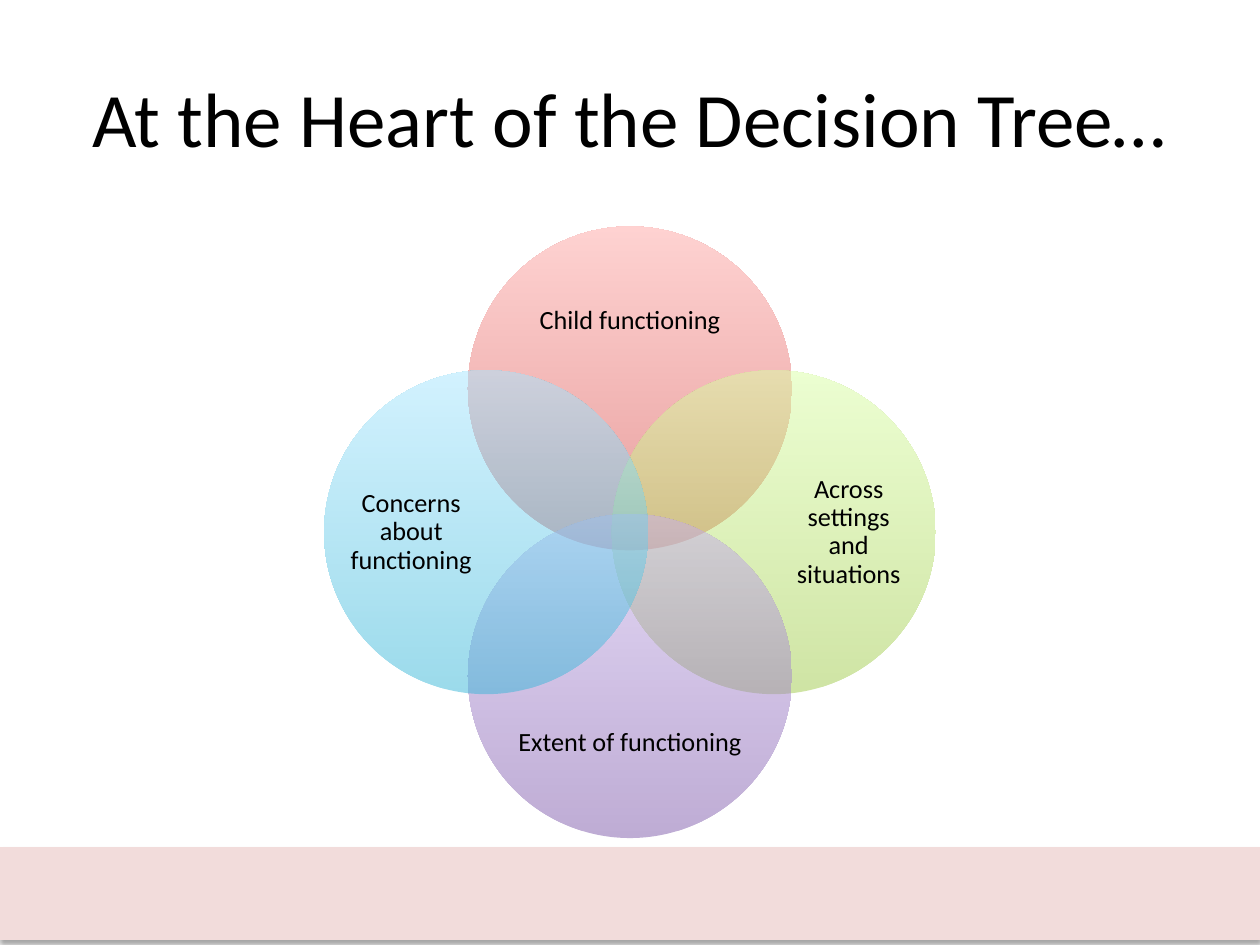
from lxml import etree
from pptx import Presentation
from pptx.dml.color import RGBColor
from pptx.enum.shapes import MSO_SHAPE
from pptx.enum.text import MSO_ANCHOR, PP_ALIGN
from pptx.oxml.ns import qn
from pptx.util import Cm, Pt

RECT = MSO_SHAPE.RECTANGLE
OVAL = MSO_SHAPE.OVAL
MIDDLE = MSO_ANCHOR.MIDDLE
CENTER = PP_ALIGN.CENTER

BLACK = RGBColor(0x00, 0x00, 0x00)
PINK = RGBColor(0xF2, 0xDC, 0xDB)
RED = RGBColor(0xD1, 0x40, 0x3C)
ROSE = RGBColor(0xFF, 0xA6, 0xA5)
GREEN = RGBColor(0xA0, 0xCA, 0x4A)
LIME = RGBColor(0xDA, 0xFF, 0xA5)
PURPLE = RGBColor(0x7F, 0x5B, 0xAB)
LILAC = RGBColor(0xC8, 0xB0, 0xED)
BLUE = RGBColor(0x39, 0xB7, 0xD8)
SKY = RGBColor(0xA7, 0xE6, 0xFF)

MID_X, MID_Y = 12.7, 10.73
SIZE = 6.53
SHIFT = 2.9
WIDE = (5.03, 2.08)
TALL = (2.51, 5.03)
PETALS = [
    ("Child functioning", RED, ROSE, 0, -1, WIDE, 4.25),
    ("Across settings and situations", GREEN, LIME, 1, 0, TALL, 4.41),
    ("Extent of functioning", PURPLE, LILAC, 0, 1, WIDE, 4.25),
    ("Concerns about functioning", BLUE, SKY, -1, 0, TALL, 4.41),
]


def add_node(parent, tag, **attrs):
    return etree.SubElement(parent, qn(tag), attrs)


class Deck:
    face = "Calibri"
    inset = {
        "margin_left": 0,
        "margin_right": 0,
        "margin_top": 0,
        "margin_bottom": 0,
    }

    def __init__(self, slide):
        self.slide = slide

    def set_text(self, frame, text, size, **extra):
        frame.text = text
        values = {"word_wrap": True, "vertical_anchor": MIDDLE, **extra}
        for name, value in values.items():
            setattr(frame, name, value)
        para = frame.paragraphs[0]
        para.alignment = CENTER
        style = {"name": self.face, "size": Pt(size)}
        for name, value in style.items():
            setattr(para.font, name, value)
        para.font.color.rgb = BLACK
        return para

    def title(self, text, left, top, width, height):
        shape = self.slide.shapes.title
        place = {
            "left": Cm(left),
            "top": Cm(top),
            "width": Cm(width),
            "height": Cm(height),
        }
        for name, value in place.items():
            setattr(shape, name, value)
        self.set_text(shape.text_frame, text, 44)

    def band(self, top, width, height):
        shape = self.slide.shapes.add_shape(
            RECT, 0, Cm(top), Cm(width), Cm(height))
        shape.fill.solid()
        shape.fill.fore_color.rgb = PINK
        shape.line.color.rgb = PINK
        shape.line.width = Pt(0.75)
        shape.shadow.inherit = False
        effects = shape.element.spPr.find(qn("a:effectLst"))
        shade = add_node(
            effects, "a:outerShdw", blurRad=str(Pt(3.1)), dist=str(Pt(1.8)),
            dir="5400000", rotWithShape="0")
        color = add_node(shade, "a:srgbClr", val=str(BLACK))
        add_node(color, "a:alpha", val="35000")

    def petal(self, x, y, dark, light):
        shape = self.slide.shapes.add_shape(
            OVAL, Cm(x - SIZE / 2), Cm(y - SIZE / 2), Cm(SIZE), Cm(SIZE))
        shape.shadow.inherit = False
        shape.line.fill.background()
        shape.fill.gradient()
        shape.fill.gradient_angle = 90
        for stop, color, spot in zip(
                shape.fill.gradient_stops, (dark, light), (0, 1)):
            stop.color.rgb = color
            stop.position = spot
        for color in shape.element.spPr.iter(qn("a:srgbClr")):
            add_node(color, "a:alpha", val="50000")

    def label(self, text, x, y, width, height):
        box = self.slide.shapes.add_textbox(
            Cm(x - width / 2), Cm(y - height / 2), Cm(width), Cm(height))
        para = self.set_text(box.text_frame, text, 15, **self.inset)
        para.line_spacing = 0.9


def main():
    prs = Presentation()
    prs.slide_width = Cm(25.4)
    prs.slide_height = Cm(19.05)
    deck = Deck(prs.slides.add_slide(prs.slide_layouts[5]))
    deck.band(17.09, 25.4, 1.85)
    deck.title("At the Heart of the Decision Tree…", 1.27, 0.76, 22.86, 3.18)
    for text, dark, light, dx, dy, size, reach in PETALS:
        deck.petal(MID_X + dx * SHIFT, MID_Y + dy * SHIFT, dark, light)
        deck.label(text, MID_X + dx * reach, MID_Y + dy * reach, *size)
    prs.save("out.pptx")


if __name__ == "__main__":
    main()
